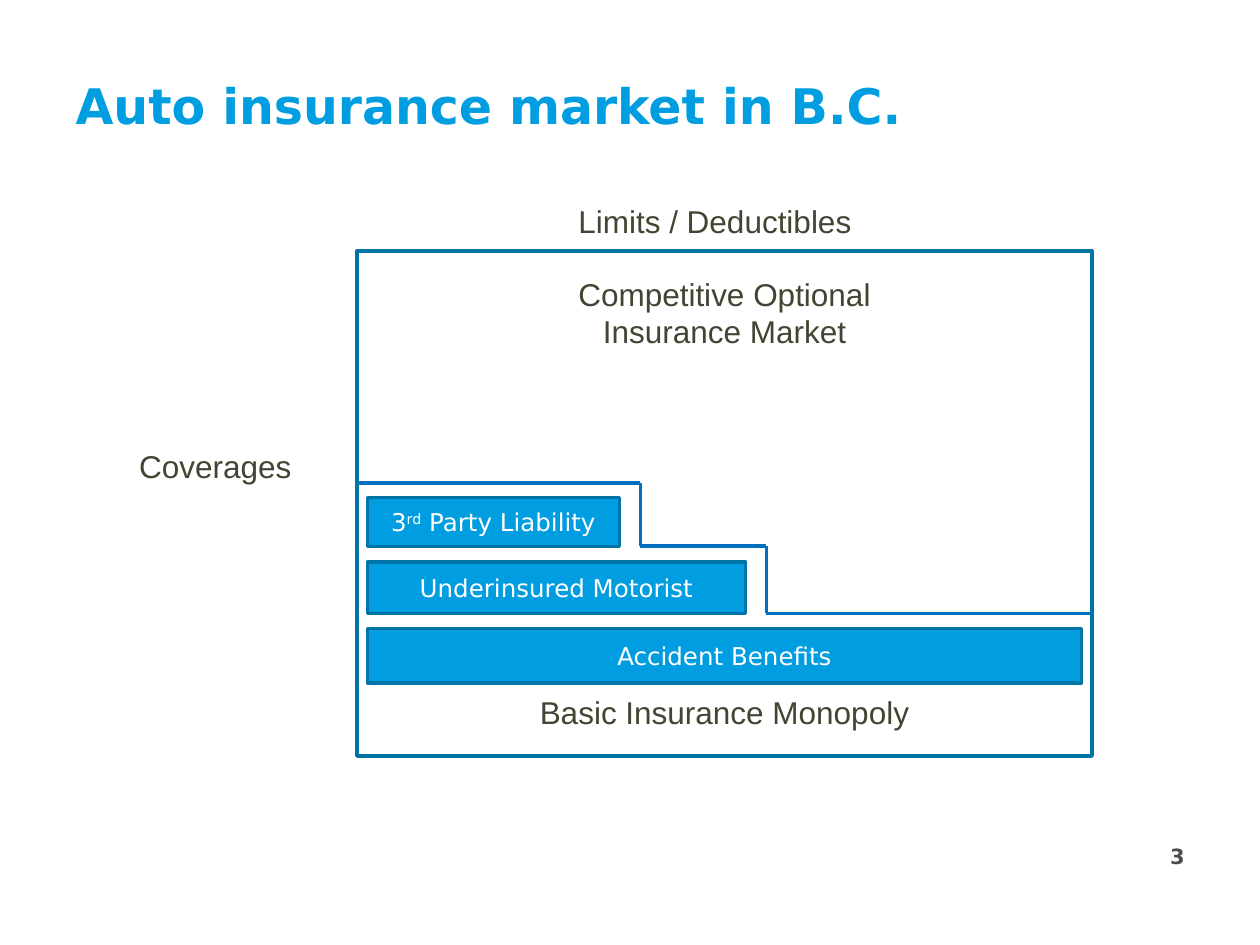
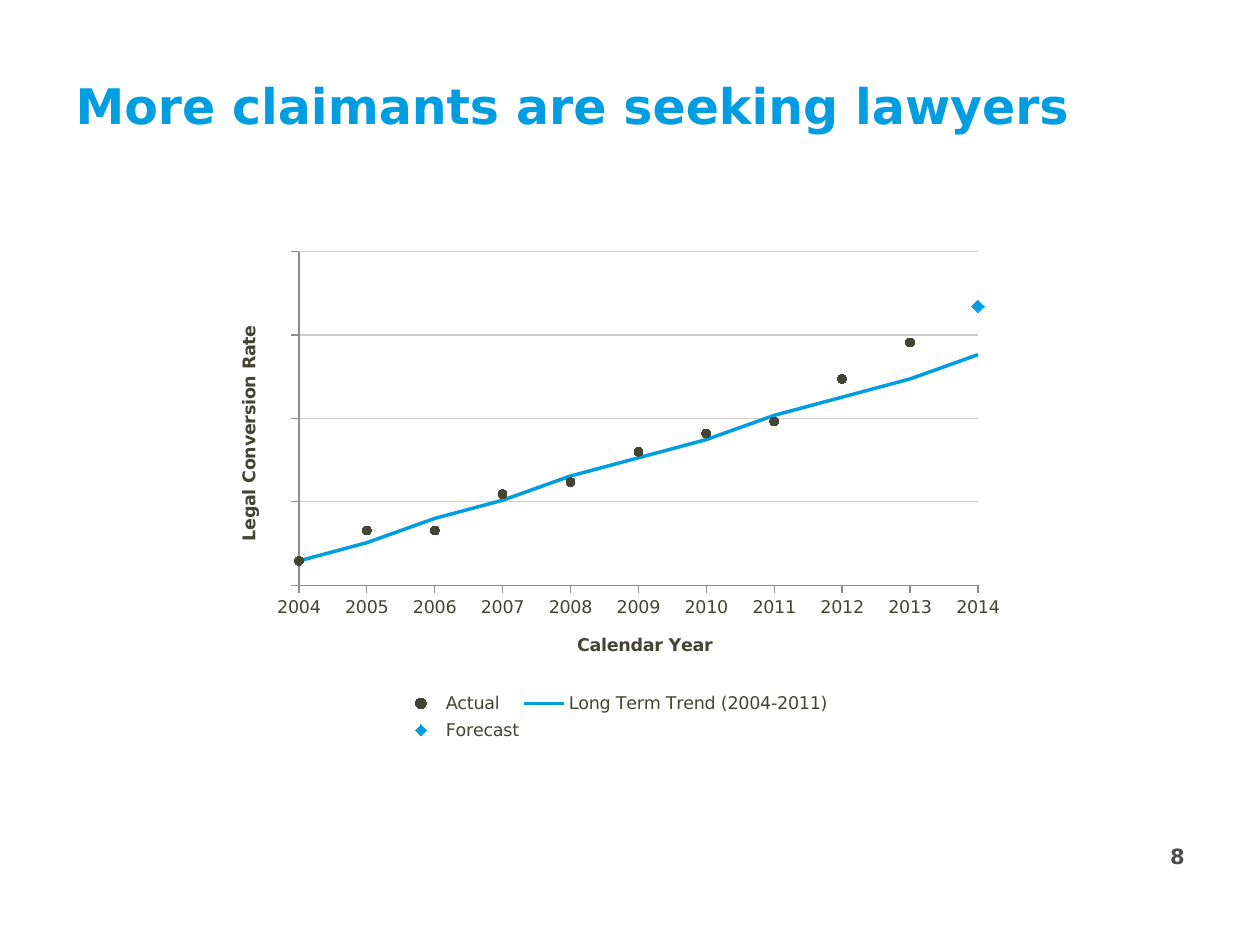
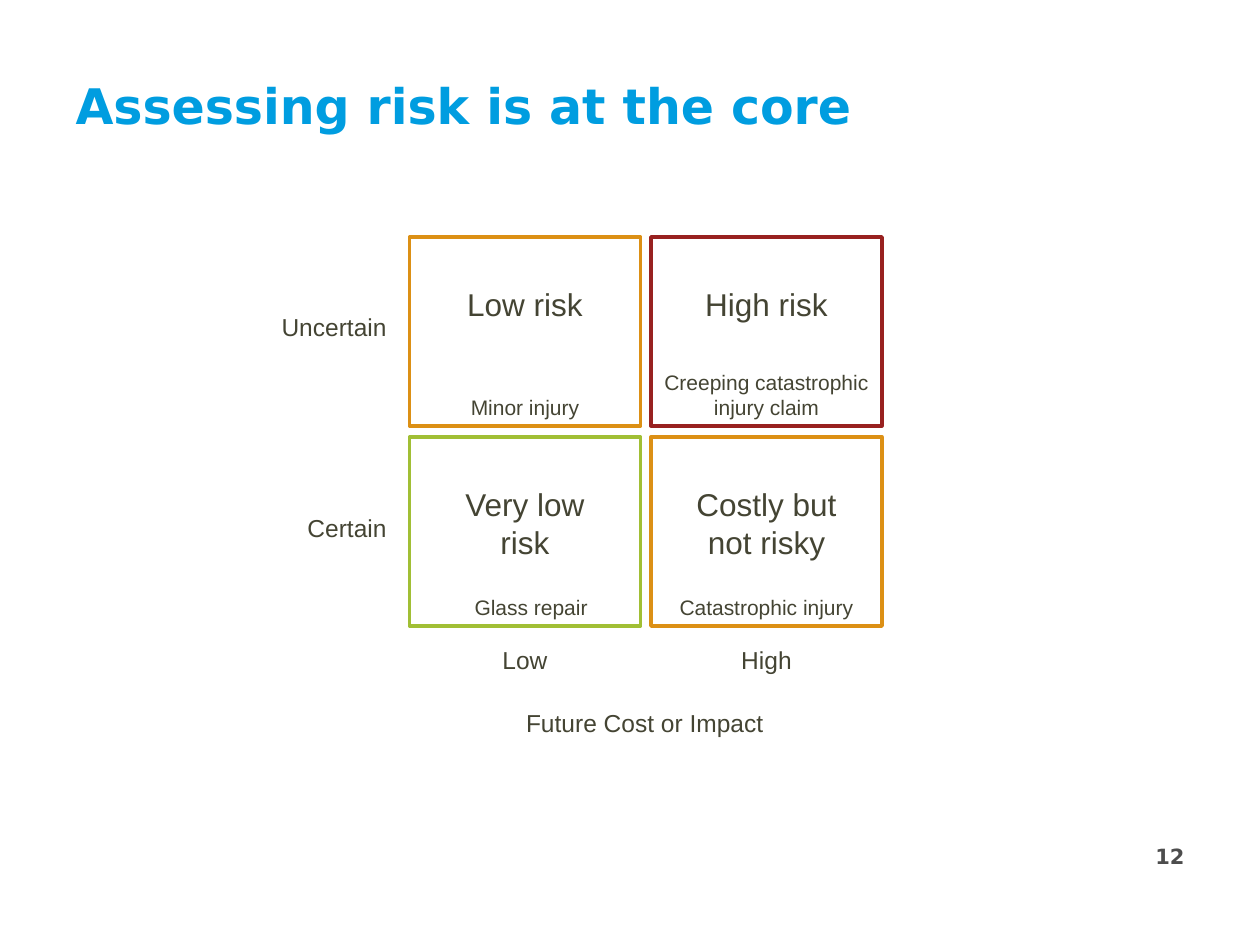
import itertools

import lxml.etree
import pptx
import pptx.chart.data
import pptx.dml.color
import pptx.enum.chart
import pptx.enum.shapes
import pptx.enum.text
import pptx.oxml
import pptx.oxml.ns
import pptx.util

Pt = pptx.util.Pt
RGBColor = pptx.dml.color.RGBColor
Align = pptx.enum.text.PP_ALIGN
Anchor = pptx.enum.text.MSO_ANCHOR
MarkerStyle = pptx.enum.chart.XL_MARKER_STYLE
qn = pptx.oxml.ns.qn

BLUE = RGBColor(0x00, 0x9D, 0xE0)
DARK_BLUE = RGBColor(0x00, 0x74, 0xA6)
STEP_BLUE = RGBColor(0x00, 0x70, 0xC0)
TEXT = RGBColor(0x44, 0x44, 0x33)
NUMBER_GRAY = RGBColor(0x4D, 0x4D, 0x4D)
AXIS_GRAY = RGBColor(0x8C, 0x8C, 0x8C)
GRID_GRAY = RGBColor(0xCC, 0xCC, 0xCC)
WHITE = RGBColor(0xFF, 0xFF, 0xFF)
ORANGE = RGBColor(0xDC, 0x90, 0x15)
RED = RGBColor(0x98, 0x21, 0x20)
GREEN = RGBColor(0xA1, 0xBF, 0x35)

HEADING_FONT = "DejaVu Sans"
BODY_FONT = "Arial"


def format_font(font, name, size, color, bold=False):
    """Set the typeface, size, colour and weight of a font."""
    font.name = name
    font.size = Pt(size)
    font.color.rgb = color
    font.bold = bold


def add_text(slide, text, left, top, width, height, size=18, align=Align.CENTER,
             anchor=Anchor.TOP, name=BODY_FONT, color=TEXT, bold=False):
    """Add a wrapped one-paragraph text box."""
    box = slide.shapes.add_textbox(Pt(left), Pt(top), Pt(width), Pt(height))
    frame = box.text_frame
    frame.word_wrap = True
    frame.vertical_anchor = anchor
    paragraph = frame.paragraphs[0]
    paragraph.text = text
    paragraph.alignment = align
    format_font(paragraph.runs[0].font, name, size, color, bold)


def add_titled_slide(presentation, title, number):
    """Add a slide with the shared title style and page number."""
    slide = presentation.slides.add_slide(presentation.slide_layouts[5])
    shape = slide.shapes.title
    shape.left, shape.top, shape.width, shape.height = Pt(36), Pt(36), Pt(648), Pt(48)
    frame = shape.text_frame
    frame.text = title
    frame.vertical_anchor = Anchor.MIDDLE
    paragraph = frame.paragraphs[0]
    paragraph.alignment = Align.LEFT
    format_font(paragraph.runs[0].font, HEADING_FONT, 28, BLUE, True)
    add_text(slide, str(number), 516, 478.5, 168, 37, 12, Align.RIGHT,
             name=HEADING_FONT, color=NUMBER_GRAY, bold=True)
    return slide


def add_box(slide, left, top, width, height, line_color, fill_color=None):
    """Add an outlined rectangle, filled when a colour is given."""
    shape = slide.shapes.add_shape(pptx.enum.shapes.MSO_SHAPE.RECTANGLE,
                                   Pt(left), Pt(top), Pt(width), Pt(height))
    shape.shadow.inherit = False
    shape.line.color.rgb = line_color
    shape.line.width = Pt(2)
    if fill_color is None:
        shape.fill.background()
    else:
        shape.fill.solid()
        shape.fill.fore_color.rgb = fill_color
    return shape


def add_bar(slide, top, width, height, parts):
    """Add a coverage bar whose second text part, if any, is superscript."""
    shape = add_box(slide, 210, top, width, height, DARK_BLUE, BLUE)
    shape.text_frame.vertical_anchor = Anchor.MIDDLE
    paragraph = shape.text_frame.paragraphs[0]
    paragraph.alignment = Align.CENTER
    for index, part in enumerate(parts):
        run = paragraph.add_run()
        run.text = part
        format_font(run.font, HEADING_FONT, 14, WHITE)
        if index == 1:
            run._r.get_or_add_rPr().set("baseline", "30000")


def add_line(slide, start, end):
    """Add a straight boundary line between two points."""
    connector = slide.shapes.add_connector(pptx.enum.shapes.MSO_CONNECTOR.STRAIGHT,
                                           *(Pt(value) for value in start + end))
    connector.line.color.rgb = STEP_BLUE
    connector.line.width = Pt(1.75)
    lxml.etree.SubElement(connector._element.spPr, qn("a:effectLst"))


def place_in_chart(element, x, y, width=None, height=None, inner=False):
    """Give a chart part a manual layout in fractions of the chart."""
    for existing in element.findall(qn("c:layout")):
        element.remove(existing)
    layout = lxml.etree.Element(qn("c:layout"))
    manual = lxml.etree.SubElement(layout, qn("c:manualLayout"))
    settings = [("layoutTarget", "inner" if inner else None),
                ("xMode", "edge"), ("yMode", "edge"),
                ("x", x), ("y", y), ("w", width), ("h", height)]
    for tag, value in settings:
        if value is not None:
            lxml.etree.SubElement(manual, qn("c:" + tag)).set("val", str(value))
    overlay = element.find(qn("c:overlay"))
    if overlay is None:
        element.insert(0, layout)
    else:
        overlay.addprevious(layout)


def format_axis(axis, title, minimum, maximum, step, x, y):
    """Set the scale, line and placed title of an axis."""
    axis.minimum_scale, axis.maximum_scale, axis.major_unit = minimum, maximum, step
    axis.major_tick_mark = pptx.enum.chart.XL_TICK_MARK.OUTSIDE
    axis.minor_tick_mark = pptx.enum.chart.XL_TICK_MARK.NONE
    axis.format.line.color.rgb = AXIS_GRAY
    axis.format.line.width = Pt(0.75)
    frame = axis.axis_title.text_frame
    frame.text = title
    format_font(frame.paragraphs[0].runs[0].font, HEADING_FONT, 10, TEXT, True)
    place_in_chart(axis.axis_title._element, x, y)


def format_markers(series, style, size, color):
    """Show a series as unconnected markers."""
    series.format.line.fill.background()
    series.marker.style = style
    series.marker.size = size
    series.marker.format.fill.solid()
    series.marker.format.fill.fore_color.rgb = color
    series.marker.format.line.color.rgb = color


def remove_empty_points(chart):
    """Leave years without a value as gaps in the stored series."""
    for point in list(chart._chartSpace.iter(qn("c:pt"))):
        if point.findtext(qn("c:v")) == "None":
            point.getparent().remove(point)


def add_conversion_chart(slide):
    """Add the scatter chart of legal conversion rates."""
    data = pptx.chart.data.XyChartData()
    for name, values in [
        ("Actual", [58, 63, 63, 69, 71, 76, 79, 81, 88, 94, None]),
        ("Long Term Trend (2004-2011)", [58, 61, 65, 68, 72, 75, 78, 82, 85, 88, 92]),
        ("Forecast", [None] * 10 + [100]),
    ]:
        series = data.add_series(name)
        for year, value in enumerate(values, 2004):
            series.add_data_point(year, value)
    chart = slide.shapes.add_chart(pptx.enum.chart.XL_CHART_TYPE.XY_SCATTER,
                                   Pt(120), Pt(138), Pt(462), Pt(289), data).chart
    remove_empty_points(chart)
    chart.has_title = False
    format_font(chart.font, HEADING_FONT, 10, TEXT)
    plot = chart.plots[0]
    plot.vary_by_categories = False
    place_in_chart(chart._chartSpace.chart.plotArea, 0.11, 0.02, 0.84, 0.66, inner=True)

    years = chart.category_axis
    format_axis(years, "Calendar Year", 2004, 2014, 1, 0.45, 0.77)
    years.has_major_gridlines = False
    years.tick_labels.number_format = "0"
    years.tick_labels.number_format_is_linked = False

    rates = chart.value_axis
    format_axis(rates, "Legal Conversion Rate", 54, 109, 13.75, 0.03, 0.16)
    rates.axis_title.text_frame._txBody.bodyPr.set("rot", "-5400000")
    rates.tick_label_position = pptx.enum.chart.XL_TICK_LABEL_POSITION.NONE
    rates.tick_labels.number_format = "0%"
    rates.tick_labels.number_format_is_linked = False
    rates.major_gridlines.format.line.color.rgb = GRID_GRAY
    rates.major_gridlines.format.line.width = Pt(0.75)

    actual, trend, forecast = plot.series
    format_markers(actual, MarkerStyle.CIRCLE, 5, TEXT)
    format_markers(forecast, MarkerStyle.DIAMOND, 7, BLUE)
    trend.marker.style = MarkerStyle.NONE
    trend.format.line.color.rgb = BLUE
    trend.format.line.width = Pt(2)

    chart.has_legend = True
    chart.legend.position = pptx.enum.chart.XL_LEGEND_POSITION.BOTTOM
    chart.legend.include_in_layout = False
    place_in_chart(chart.legend._element, 0.23, 0.88, 0.54, 0.12)


def build_market_slide(presentation):
    """Build the diagram of the basic and optional insurance markets."""
    slide = add_titled_slide(presentation, "Auto insurance market in B.C.", 3)
    add_bar(slide, 284.4, 144, 28, ["3", "rd", " Party Liability"])
    add_bar(slide, 321.2, 216, 29.5, ["Underinsured Motorist"])
    add_bar(slide, 359.3, 408, 31, ["Accident Benefits"])
    add_box(slide, 204, 143.3, 420, 288.7, DARK_BLUE)
    boundary = [(204, 276), (365.8, 276), (365.8, 312), (438, 312), (438, 350.5),
                (624, 350.5)]
    for start, end in itertools.pairwise(boundary):
        add_line(slide, start, end)
    add_text(slide, "Coverages", 63, 252, 120, 29)
    add_text(slide, "Limits / Deductibles", 315.5, 111.6, 186, 29)
    add_text(slide, "Competitive Optional Insurance Market", 300, 153.4, 228, 51)
    add_text(slide, "Basic Insurance Monopoly", 300, 392.4, 228, 29)


def build_lawyers_slide(presentation):
    """Build the slide with the conversion rate chart."""
    slide = add_titled_slide(presentation, "More claimants are seeking lawyers", 8)
    add_conversion_chart(slide)


def build_risk_slide(presentation):
    """Build the two by two risk matrix."""
    slide = add_titled_slide(presentation, "Assessing risk is at the core", 12)
    left, top, width, height = 234, 135.4, 132, 108
    column_step, row_step = 138, 114.4
    matrix = [
        ("Uncertain", [("Low risk", "Minor injury", ORANGE, 0),
                       ("High risk", "Creeping catastrophic injury claim", RED, 0)]),
        ("Certain", [("Very low risk", "Glass repair", GREEN, 3.5),
                     ("Costly but not risky", "Catastrophic injury", ORANGE, 0)]),
    ]
    for row, (certainty, cells) in enumerate(matrix):
        y = top + row * row_step
        add_text(slide, certainty, 96, y + 39.6, width, 24.5, 14, Align.RIGHT)
        for column, (risk, example, color, shift) in enumerate(cells):
            x = left + column * column_step
            add_box(slide, x, y, width, height, color)
            add_text(slide, risk, x + 12, y + 24, width - 24, 51)
            add_text(slide, example, x + shift, y + height - 36, width, 36, 12,
                     anchor=Anchor.BOTTOM)
    for column, impact in enumerate(["Low", "High"]):
        add_text(slide, impact, left + column * column_step, 365, width, 24.5, 14)
    add_text(slide, "Future Cost or Impact", 260.5, 401, 216, 24.5, 14)


def main():
    """Build and save the presentation."""
    presentation = pptx.Presentation()
    presentation.slide_width, presentation.slide_height = Pt(720), Pt(540)
    build_market_slide(presentation)
    build_lawyers_slide(presentation)
    build_risk_slide(presentation)
    presentation.save("out.pptx")


if __name__ == "__main__":
    main()
